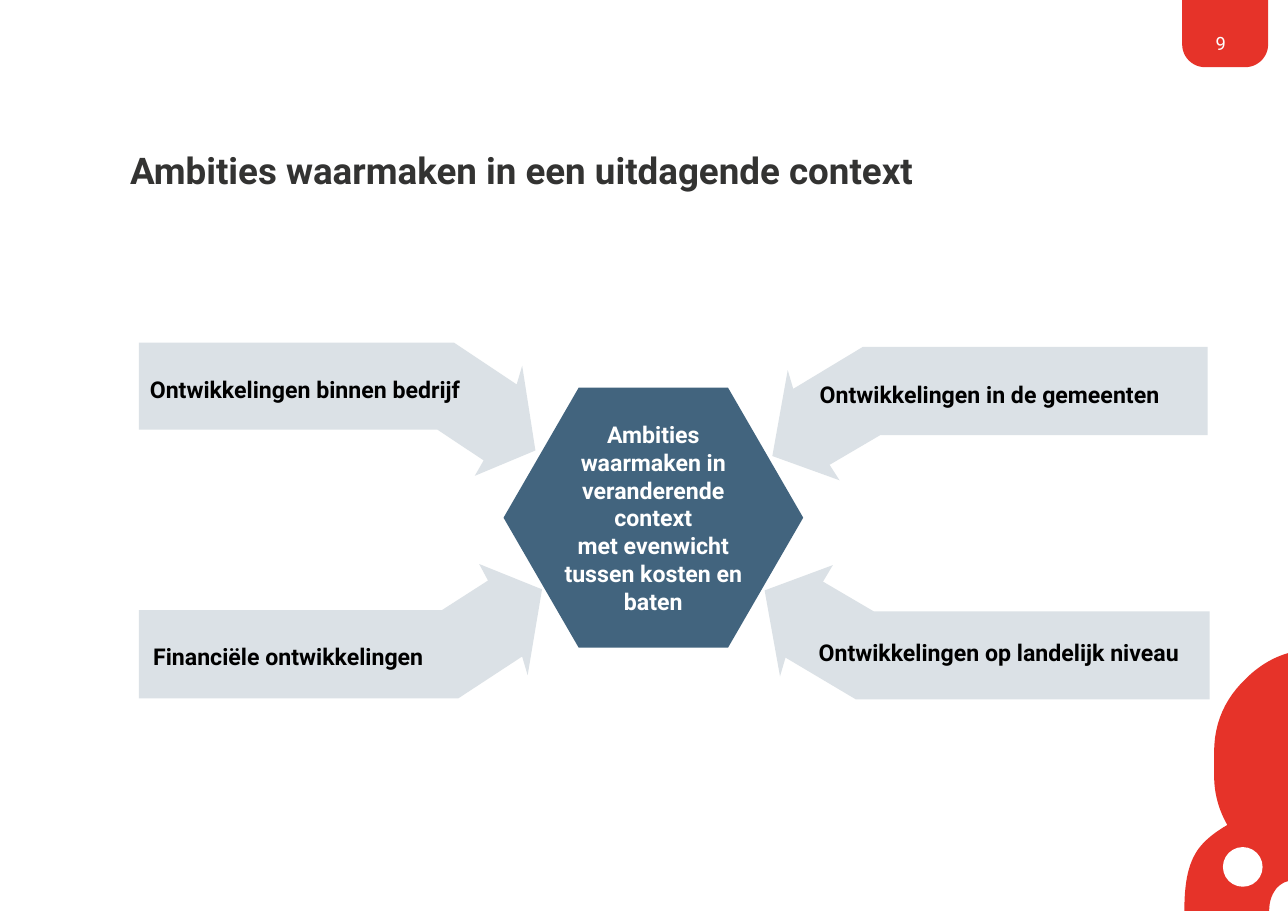
"""Build the slide on realising ambitions in a challenging context."""
from pptx import Presentation
from pptx.dml.color import RGBColor
from pptx.enum.shapes import MSO_SHAPE as Preset
from pptx.enum.text import MSO_ANCHOR as Anchor, PP_ALIGN as Align
from pptx.util import Inches, Pt

RED = RGBColor(0xE6, 0x33, 0x29)
BLUE = RGBColor(0x42, 0x64, 0x7E)
GREY = RGBColor(0xDB, 0xE1, 0xE6)
DARK = RGBColor(0x33, 0x33, 0x32)
WHITE = RGBColor(0xFF, 0xFF, 0xFF)
BLACK = RGBColor(0, 0, 0)


def paint(shape, color):
    shape.shadow.inherit = False
    shape.fill.solid()
    shape.fill.fore_color.rgb = color
    shape.line.fill.background()
    return shape


def write(shape, text, size, color, bold=True, align=Align.LEFT, anchor=Anchor.MIDDLE):
    frame = shape.text_frame
    frame.word_wrap = True
    frame.vertical_anchor = anchor
    frame.margin_left = frame.margin_right = frame.margin_top = frame.margin_bottom = 0
    para = frame.paragraphs[0]
    para.text = text
    para.alignment = align
    para.font.name = "Roboto"
    para.font.size = Pt(size)
    para.font.bold = bold
    para.font.color.rgb = color


deck = Presentation()
deck.slide_width, deck.slide_height = Inches(11.69), Inches(8.27)
page = deck.slides.add_slide(deck.slide_layouts[5])
shapes = page.shapes

tab = paint(shapes.add_shape(Preset.ROUND_2_SAME_RECTANGLE, Inches(10.73), Inches(0),
                             Inches(0.78), Inches(0.61)), RED)
tab.adjustments[0], tab.adjustments[1] = 0, 0.34

corner_curves = [
    [(11.69, 5.93), (11.55, 5.97), (11.42, 6.05), (11.31, 6.16)],
    [(11.31, 6.16), (11.12, 6.34), (11.02, 6.56), (11.02, 6.83)],
    [(11.02, 7.04), (11.02, 7.2), (11.06, 7.35), (11.14, 7.49)],
    [(11.14, 7.49), (11, 7.57), (10.9, 7.66), (10.85, 7.75)],
    [(10.85, 7.75), (10.78, 7.87), (10.75, 8.03), (10.75, 8.27)],
    [(11.52, 8.27), (11.52, 8.17), (11.55, 8.11), (11.59, 8.06)],
    [(11.59, 8.06), (11.62, 8.03), (11.65, 8.01), (11.69, 8)],
]
steps = 12
corner_outline = []
for curve in corner_curves:
    for step in range(steps + 1):
        t = step / steps
        weights = ((1 - t) ** 3, 3 * t * (1 - t) ** 2, 3 * t ** 2 * (1 - t), t ** 3)
        corner_outline.append(tuple(sum(weight * point[axis] for weight, point in zip(weights, curve))
                                    for axis in (0, 1)))

arrow_outlines = [
    [(1.26, 3.9), (3.97, 3.9), (4.39, 4.18), (4.31, 4.32), (4.86, 4.09),
     (4.74, 3.32), (4.69, 3.49), (4.12, 3.11), (1.26, 3.11)],
    [(10.96, 3.95), (7.99, 3.95), (7.53, 4.22), (7.62, 4.36), (7.01, 4.14),
     (7.15, 3.36), (7.2, 3.53), (7.83, 3.15), (10.96, 3.15)],
    [(1.26, 5.54), (4.01, 5.54), (4.43, 5.27), (4.35, 5.12), (4.92, 5.35),
     (4.79, 6.13), (4.74, 5.96), (4.16, 6.34), (1.26, 6.34)],
    [(10.98, 5.55), (7.93, 5.55), (7.47, 5.28), (7.56, 5.13), (6.94, 5.36),
     (7.08, 6.14), (7.13, 5.97), (7.77, 6.35), (10.98, 6.35)],
]
for outline, color in [(corner_outline, RED)] + [(arrow, GREY) for arrow in arrow_outlines]:
    points = [(Inches(x), Inches(y)) for x, y in outline]
    builder = shapes.build_freeform(*points[0])
    builder.add_line_segments(points[1:], close=True)
    paint(builder.convert_to_shape(), color)

paint(shapes.add_shape(Preset.OVAL, Inches(11.1), Inches(7.69), Inches(0.36), Inches(0.36)), WHITE)

title = shapes.title
title.left, title.top, title.width, title.height = Inches(1.18), Inches(1.02), Inches(9.8), Inches(0.72)
write(title, "Ambities waarmaken in een uitdagende context", 24, DARK, anchor=Anchor.BOTTOM)

number = shapes.add_textbox(Inches(10.82), Inches(0.29), Inches(0.52), Inches(0.36))
write(number, "9", 12, WHITE, bold=False, align=Align.CENTER, anchor=Anchor.TOP)

hexagon = paint(shapes.add_shape(Preset.HEXAGON, Inches(4.57), Inches(3.52),
                                 Inches(2.72), Inches(2.36)), BLUE)
hexagon.adjustments[0] = 0.289
write(hexagon, "Ambities waarmaken in veranderende context\vmet evenwicht tussen kosten en baten",
      15.1, WHITE, align=Align.CENTER)

labels = [
    ("Ontwikkelingen binnen bedrijf", 1.36, 3.41, 3.09, 0.24),
    ("Ontwikkelingen in de gemeenten", 7.44, 3.44, 3.3, 0.28),
    ("Financiële ontwikkelingen", 1.39, 5.84, 3.05, 0.24),
    ("Ontwikkelingen op landelijk niveau", 7.43, 5.78, 3.52, 0.29),
]
for text, *place in labels:
    label = paint(shapes.add_shape(Preset.RECTANGLE, *map(Inches, place)), GREY)
    write(label, text, 15.1, BLACK)

deck.save("out.pptx")
